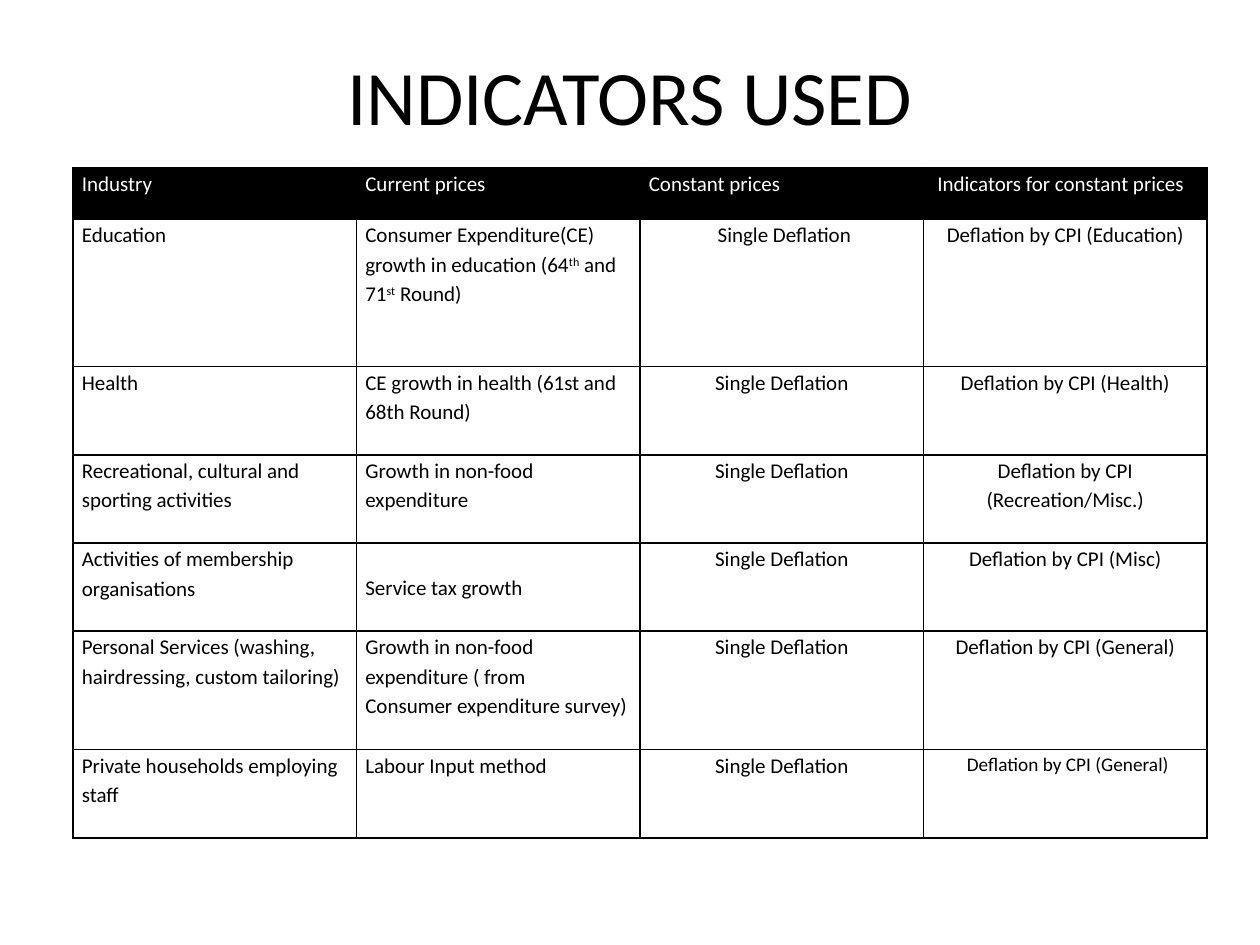
import dataclasses

import lxml.etree
import pptx
import pptx.dml.color
import pptx.enum.text
import pptx.oxml.ns
import pptx.util

Inches = pptx.util.Inches
Pt = pptx.util.Pt
Align = pptx.enum.text.PP_ALIGN
Anchor = pptx.enum.text.MSO_ANCHOR


@dataclasses.dataclass(frozen=True)
class Theme:
    """Colours, font and sizes of the slide."""
    ink: str = "000000"
    paper: str = "FFFFFF"
    font: str = "Calibri"
    title_size: float = 44
    table_size: float = 12
    small_size: float = 11
    border: float = 1
    spacing: float = 1.15
    inset: float = 0.07
    lead: float = 0.04
    line: float = 0.23


THEME = Theme()
HEADINGS = ["Industry", "Current prices", "Constant prices", "Indicators for constant prices"]
INDUSTRIES = [
    ("Education", "Consumer Expenditure(CE) growth in education (64^th^ and 71^st^ Round)",
     "Deflation by CPI (Education)"),
    ("Health", "CE growth in health (61st and 68th Round)", "Deflation by CPI (Health)"),
    ("Recreational, cultural and sporting activities", "Growth in non-food expenditure",
     "Deflation by CPI (Recreation/Misc.)"),
    ("Activities of membership organisations", "Service tax growth", "Deflation by CPI (Misc)"),
    ("Personal Services (washing, hairdressing, custom tailoring)",
     "Growth in non-food expenditure ( from\nConsumer expenditure survey)",
     "Deflation by CPI (General)"),
    ("Private households employing staff", "Labour Input method", "Deflation by CPI (General)"),
]
ROWS = [HEADINGS] + [[industry, current, "Single Deflation", indicator]
                     for industry, current, indicator in INDUSTRIES]
ROW_HEIGHTS = [0.41, 1.17, 0.7, 0.7, 0.7, 0.94, 0.7]
INDENTED = {(0, 3), (1, 2), (6, 3)}
LOWERED = {(4, 1)}
SMALL = {(6, 3)}


def style_run(run, size, colour):
    """Give a run the theme font, a size and a colour."""
    run.font.name = THEME.font
    run.font.size = Pt(size)
    run.font.color.rgb = pptx.dml.color.RGBColor.from_string(colour)


def write_paragraph(paragraph, text, size, colour, align):
    """Write text whose parts between carets are superscript."""
    paragraph.alignment = align
    for position, part in enumerate(text.split("^")):
        run = paragraph.add_run()
        run.text = part
        style_run(run, size, colour)
        if position % 2:
            run.font._element.set("baseline", "30000")


def draw_borders(cell):
    """Draw a solid line on all four sides of a cell."""
    properties = cell._tc.get_or_add_tcPr()
    qn = pptx.oxml.ns.qn
    for side in ("a:lnL", "a:lnR", "a:lnT", "a:lnB"):
        edge = lxml.etree.SubElement(properties, qn(side), w=str(Pt(THEME.border)))
        fill = lxml.etree.SubElement(edge, qn("a:solidFill"))
        lxml.etree.SubElement(fill, qn("a:srgbClr"), val=THEME.ink)


def fill_cell(cell, text, row, column):
    """Write and style one cell according to its place in the table."""
    heading = row == 0
    place = (row, column)
    draw_borders(cell)
    if heading:
        cell.fill.solid()
        cell.fill.fore_color.rgb = pptx.dml.color.RGBColor.from_string(THEME.ink)
    else:
        cell.fill.background()
    cell.margin_left = Inches(THEME.inset + (THEME.lead if place in INDENTED else 0))
    cell.margin_right = Inches(THEME.inset)
    cell.margin_top = Inches(THEME.line if place in LOWERED else 0)
    cell.margin_bottom = 0
    cell.vertical_anchor = Anchor.TOP
    size = THEME.small_size if place in SMALL else THEME.table_size
    colour = THEME.paper if heading else THEME.ink
    align = Align.LEFT if heading or column < 2 else Align.CENTER
    frame = cell.text_frame
    for number, line in enumerate(text.split("\n")):
        paragraph = frame.add_paragraph() if number else frame.paragraphs[0]
        paragraph.line_spacing = THEME.spacing
        write_paragraph(paragraph, line, size, colour, align)


def add_title(slide, left, top, width, height):
    """Place the centred slide title in the given box."""
    title = slide.shapes.add_textbox(Inches(left), Inches(top), Inches(width), Inches(height))
    frame = title.text_frame
    frame.word_wrap = True
    frame.vertical_anchor = Anchor.MIDDLE
    write_paragraph(frame.paragraphs[0], "INDICATORS USED",
                    THEME.title_size, THEME.ink, Align.CENTER)


def add_indicator_table(slide, left, top, width, height):
    """Place the table of indicators by industry in the given box."""
    table = slide.shapes.add_table(len(ROWS), len(HEADINGS), Inches(left), Inches(top),
                                   Inches(width), Inches(height)).table
    for column in table.columns:
        column.width = Inches(width / len(HEADINGS))
    for row, texts in enumerate(ROWS):
        table.rows[row].height = Inches(height * ROW_HEIGHTS[row] / sum(ROW_HEIGHTS))
        for column, text in enumerate(texts):
            fill_cell(table.cell(row, column), text, row, column)


def main():
    """Build and save the slide."""
    deck = pptx.Presentation()
    deck.slide_width, deck.slide_height = Inches(10), Inches(7.5)
    slide = deck.slides.add_slide(deck.slide_layouts[6])
    add_title(slide, 0.5, 0.25, 9, 1)
    add_indicator_table(slide, 0.58, 1.33, 9, 5.32)
    deck.save("out.pptx")


if __name__ == "__main__":
    main()
